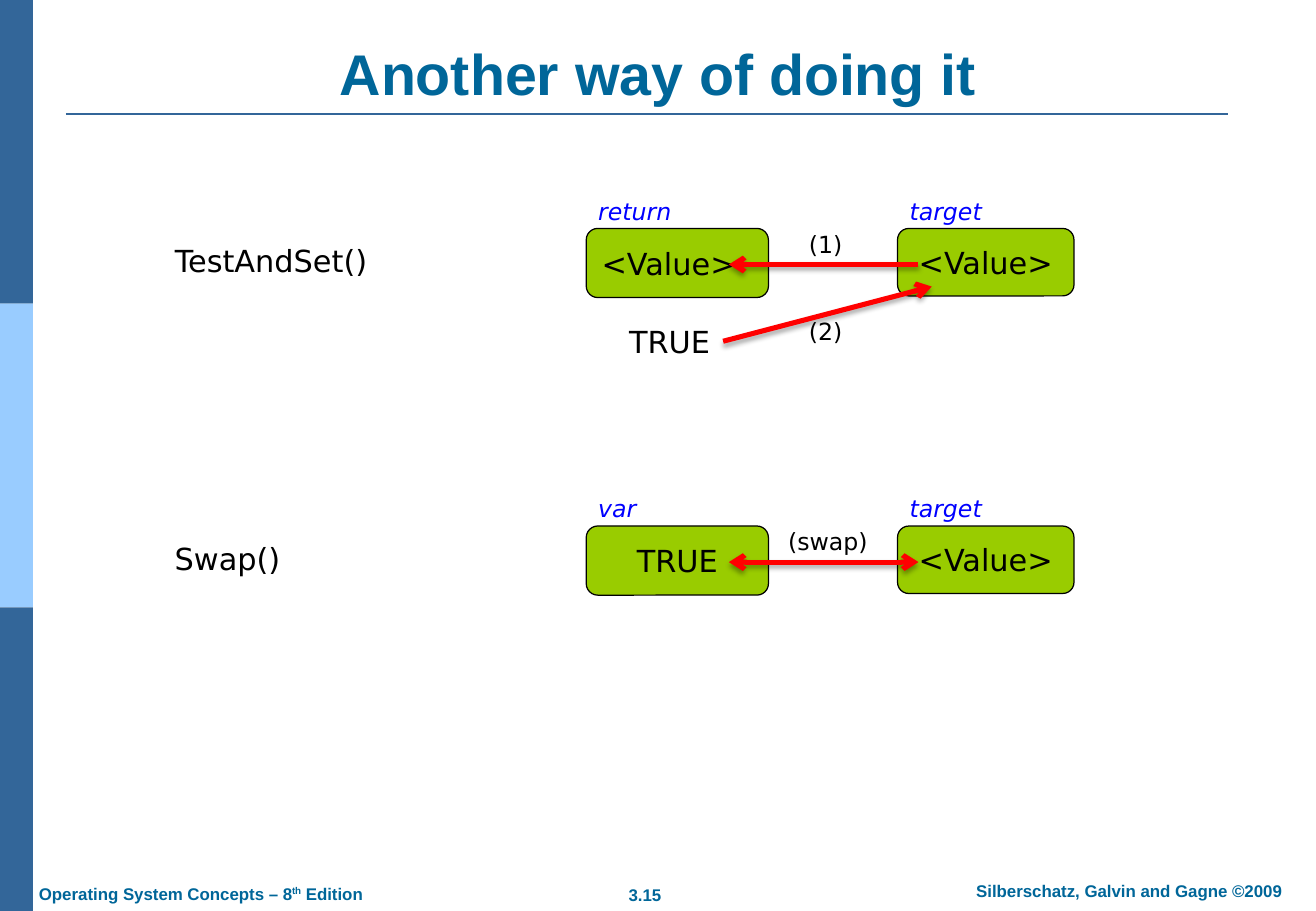
from dataclasses import dataclass

from lxml.etree import SubElement
from pptx import Presentation
from pptx.dml.color import RGBColor as RGB
from pptx.enum.shapes import MSO_CONNECTOR as CONN, MSO_SHAPE as SHAPE
from pptx.enum.text import MSO_ANCHOR as ANCHOR, MSO_AUTO_SIZE as FIT, PP_ALIGN as ALIGN
from pptx.oxml.ns import qn
from pptx.util import Pt


@dataclass(frozen=True)
class Theme:
    navy: str = "336699"
    sky: str = "99CCFF"
    teal: str = "006699"
    green: str = "99CC00"
    black: str = "000000"
    blue: str = "0000FF"
    red: str = "FF0000"
    sans: str = "Arial"
    body: str = "DejaVu Sans"
    title_size: float = 34
    code_size: float = 18
    label_size: float = 14
    footer_size: float = 10


class SlideBuilder:
    def __init__(self, slide, theme):
        self.shapes = slide.shapes
        self.theme = theme

    def set_text(self, sp, runs, size, color, font, align=ALIGN.LEFT, anchor=ANCHOR.TOP,
                 wrap=False, fit=FIT.NONE, **style):
        """Fill sp with one paragraph; runs are (text, baseline percent) pairs."""
        tf = sp.text_frame
        frame = {"word_wrap": wrap, "auto_size": fit, "vertical_anchor": anchor}
        for name, value in frame.items():
            setattr(tf, name, value)
        p = tf.paragraphs[0]
        p.alignment = align
        for text, baseline in runs:
            r = p.add_run()
            r.text = text
            for name, value in {"size": Pt(size), "name": font, **style}.items():
                setattr(r.font, name, value)
            r.font.color.rgb = RGB.from_string(color)
            if baseline:
                r._r.get_or_add_rPr().set("baseline", str(baseline * 1000))

    def text(self, box, runs, size, color, font, **style):
        sp = self.shapes.add_textbox(*map(Pt, box))
        self.set_text(sp, runs, size, color, font, **style)

    def heading(self, box, text):
        self.text(box, [(text, 0)], self.theme.title_size, self.theme.teal, self.theme.sans,
                  align=ALIGN.CENTER, anchor=ANCHOR.BOTTOM, wrap=True, bold=True)

    def footer(self, box, *runs, **style):
        self.text(box, runs, self.theme.footer_size, self.theme.teal, self.theme.sans,
                  fit=FIT.SHAPE_TO_FIT_TEXT, bold=True, **style)

    def code(self, box, text):
        self.text(box, [(text, 0)], self.theme.code_size, self.theme.black, self.theme.body,
                  fit=FIT.SHAPE_TO_FIT_TEXT)

    def label(self, box, text, color, italic=False):
        self.text(box, [(text, 0)], self.theme.label_size, color, self.theme.body,
                  fit=FIT.SHAPE_TO_FIT_TEXT, italic=italic)

    def block(self, box, fill, kind=SHAPE.RECTANGLE):
        sp = self.shapes.add_shape(kind, *map(Pt, box))
        sp.shadow.inherit = False
        sp.fill.solid()
        sp.fill.fore_color.rgb = RGB.from_string(fill)
        sp.line.fill.background()
        return sp

    def variable(self, box, name, name_width, value, align=ALIGN.CENTER):
        """Draw a green memory cell with its name in blue above it."""
        t = self.theme
        sp = self.block(box, t.green, SHAPE.ROUNDED_RECTANGLE)
        sp.line.color.rgb = RGB.from_string(t.black)
        sp.line.width = Pt(0.75)
        self.set_text(sp, [(value, 0)], t.code_size, t.black, t.body,
                      align=align, anchor=ANCHOR.MIDDLE)
        left, top = box[:2]
        self.label((left, top - 22.3, name_width, 24.2), name, t.blue, italic=True)

    def line(self, start, end, color, width):
        """Add a straight line; return its properties and its empty effect list."""
        cx = self.shapes.add_connector(CONN.STRAIGHT, *map(Pt, start + end))
        cx.line.color.rgb = RGB.from_string(color)
        cx.line.width = Pt(width)
        props = cx._element.spPr
        return props, SubElement(props, qn("a:effectLst"))

    def arrow(self, start, end, ends=("tailEnd",)):
        props, effects = self.line(start, end, self.theme.red, 3)
        for tag in ends:
            SubElement(props.find(qn("a:ln")), qn(f"a:{tag}"), type="arrow")
        shadow = SubElement(effects, qn("a:outerShdw"), blurRad=str(Pt(3.1)),
                            dist=str(Pt(1.8)), dir="5400000", rotWithShape="0")
        color = SubElement(shadow, qn("a:srgbClr"), val=self.theme.black)
        SubElement(color, qn("a:alpha"), val="35000")


def main():
    prs = Presentation()
    prs.slide_width, prs.slide_height = Pt(780), Pt(540)
    t = Theme()
    s = SlideBuilder(prs.slides.add_slide(prs.slide_layouts[6]), t)

    for i, color in enumerate((t.navy, t.sky, t.navy)):
        s.block((0, i * 180, 19.5, 180), color)
    s.line((39, 67.7), (728, 67.7), t.navy, 1.5)
    s.heading((39, 21.6, 702, 45.4), "Another way of doing it")

    s.footer((364.3, 520.6, 36, 20), ("3.15", 0), align=ALIGN.CENTER)
    s.footer((553.7, 518.4, 231, 20), ("Silberschatz, Galvin and Gagne ©2009", 0),
             align=ALIGN.CENTER, wrap=True)
    s.footer((16, 520, 209.5, 20), ("Operating System Concepts – 8", 0), ("th", 30),
             (" Edition", 0))

    operations = (
        ("TestAndSet()", 133.2, "return", 62.6, "<Value>", ALIGN.LEFT,
         "(1)", 472.3, 36.7, ("tailEnd",)),
        ("Swap()", 80, "var", 41, "TRUE", ALIGN.CENTER,
         "(swap)", 460, 63.4, ("headEnd", "tailEnd")),
    )
    for i, (call, call_w, name, name_w, value, align, step, step_x, step_w,
            ends) in enumerate(operations):
        top = 135.4 + i * 176.4
        s.code((96.5, top + 4.7, call_w, 29), call)
        s.variable((532, top, 104.6, 40), "target", 61.2, "<Value>")
        s.variable((347.5, top, 108, 41), name, name_w, value, align)
        s.arrow((544.4, top + 21.4), (432, top + 21.4), ends)
        s.label((step_x, top - 2.9, step_w, 24.2), step, t.black)

    s.code((365.8, 188, 63.4, 29), "TRUE")
    s.arrow((428.6, 202.3), (552.3, 169.9))
    s.label((472.3, 184.3, 36.7, 24.2), "(2)", t.black)

    prs.save("out.pptx")


if __name__ == "__main__":
    main()
